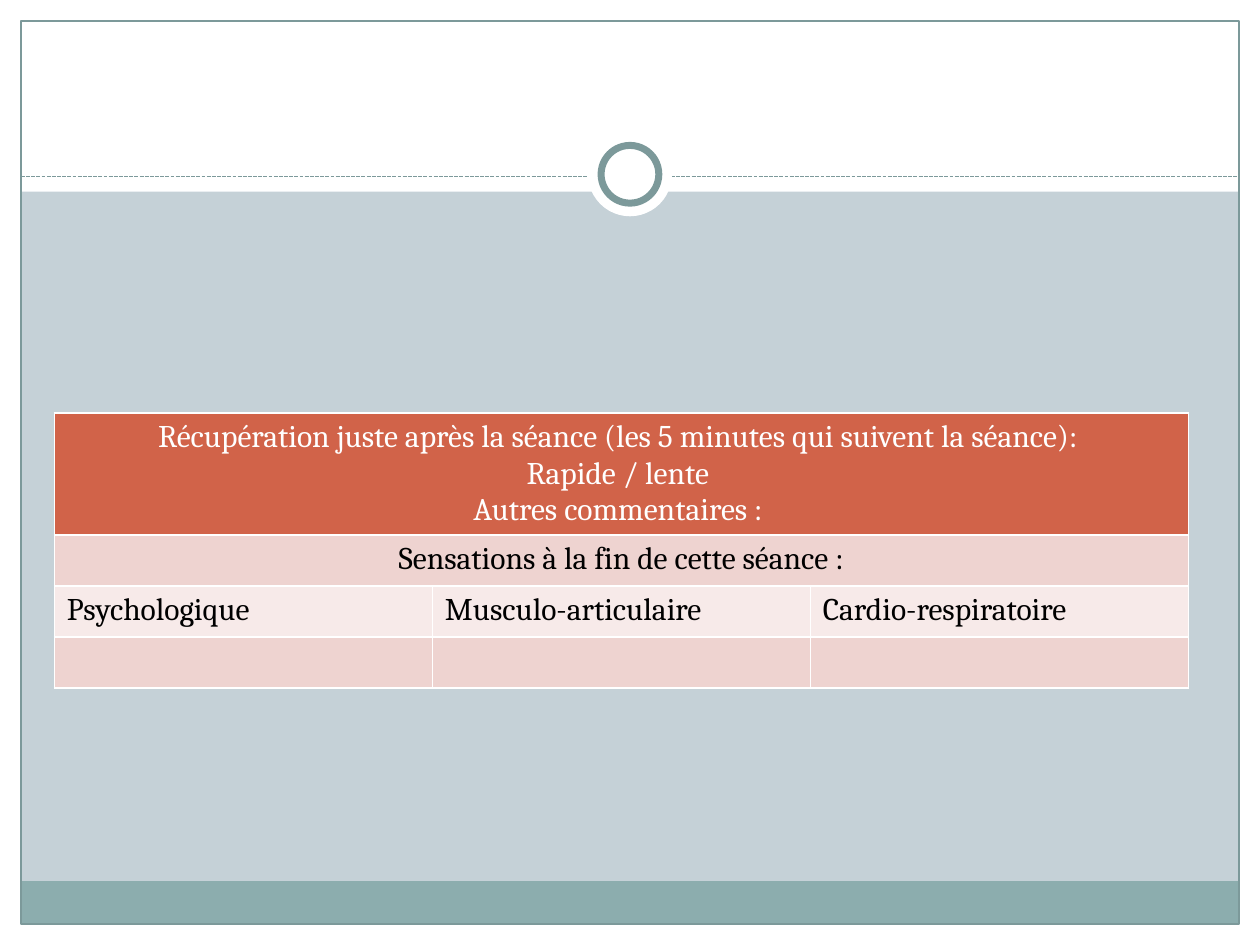
from lxml import etree
from pptx import Presentation
from pptx.dml.color import RGBColor
from pptx.enum import dml, shapes, text
from pptx.oxml import ns
from pptx.util import Pt

WHITE = RGBColor(0xFF, 0xFF, 0xFF)
BLACK = RGBColor(0, 0, 0)
MIST = RGBColor(0xC5, 0xD1, 0xD7)
TEAL = RGBColor(0x8C, 0xAD, 0xAE)
SLATE = RGBColor(0x7C, 0x99, 0x9A)
RUST = RGBColor(0xD1, 0x63, 0x49)
ROSE = RGBColor(0xEE, 0xD3, 0xD0)
BLUSH = RGBColor(0xF7, 0xEA, 0xE9)

WIDTH, HEIGHT, MARGIN = 720, 540, 12
FONT = {"name": "Cambria", "size": Pt(18), "bold": False}
HEADING = [
    "Récupération juste après la séance (les 5 minutes qui suivent la séance): ",
    "Rapide / lente ",
    "Autres commentaires : ",
]
QUESTION = ["Sensations à la fin de cette séance :"]
SENSATIONS = ["Psychologique", "Musculo-articulaire", "Cardio-respiratoire"]


def add_panel(page, box, fill=None, line=None, weight=0.75, kind=shapes.MSO_SHAPE.RECTANGLE):
    """Add a flat preset shape in the box, with optional fill and outline."""
    panel = page.shapes.add_shape(kind, *map(Pt, box))
    panel.shadow.inherit = False
    if fill is None:
        panel.fill.background()
    else:
        panel.fill.solid()
        panel.fill.fore_color.rgb = fill
    if line is None:
        panel.line.fill.background()
    else:
        panel.line.color.rgb = line
        panel.line.width = Pt(weight)


def add_frame(page, box):
    """Add the white margins, footer band and outline around the box."""
    left, top, width, height = box
    right, bottom = left + width, top + height
    add_panel(page, (0, bottom, WIDTH, HEIGHT - bottom), WHITE)
    add_panel(page, (0, 0, WIDTH, 109.5), WHITE)
    for edge in (0, right):
        add_panel(page, (edge, 0, left, HEIGHT), WHITE)
    add_panel(page, (left, bottom - 24.5, width, 24.5), TEAL)
    add_panel(page, box, line=SLATE)


def add_divider(page, box):
    """Add the dashed rule along the top of the box and the ring at its centre."""
    left, top, width, diameter = box
    rule = page.shapes.add_connector(
        shapes.MSO_CONNECTOR.STRAIGHT, Pt(left), Pt(top), Pt(left + width), Pt(top))
    rule.line.color.rgb = SLATE
    rule.line.width = Pt(0.75)
    rule.line.dash_style = dml.MSO_LINE.SQUARE_DOT
    rule_format = rule.line._get_or_add_ln()
    rule_format.find(ns.qn("a:prstDash")).set("val", "sysDash")
    etree.SubElement(rule_format.getparent(), ns.qn("a:effectLst"))
    centre_x, centre_y = left + width / 2, top - 1.2
    for size, line in ((diameter, None), (33, SLATE)):
        ring = (centre_x - size / 2, centre_y - size / 2, size, size)
        add_panel(page, ring, WHITE, line, 4, shapes.MSO_SHAPE.OVAL)


def add_borders(cell):
    """Give the cell white one-point borders on all sides."""
    properties = cell._tc.get_or_add_tcPr()
    for index, side in enumerate(("lnL", "lnR", "lnT", "lnB")):
        border = etree.Element(ns.qn(f"a:{side}"), w=str(Pt(1)))
        fill = etree.SubElement(border, ns.qn("a:solidFill"))
        etree.SubElement(fill, ns.qn("a:srgbClr"), val=str(WHITE))
        properties.insert(index, border)


def fill_cell(cell, lines, color, align):
    """Write one paragraph for each line in the cell."""
    frame = cell.text_frame
    for index, line in enumerate(lines):
        para = frame.add_paragraph() if index else frame.paragraphs[0]
        para.alignment = align
        span = para.add_run()
        span.text = line
        for name, value in FONT.items():
            setattr(span.font, name, value)
        span.font.color.rgb = color


def add_sensations_table(page, box):
    """Add the recovery and sensations table in the box."""
    columns, heights, fills = 3, (69.4, 29.2, 29.2, 29.2), (RUST, ROSE, BLUSH, ROSE)
    grid = page.shapes.add_table(len(heights), columns, *map(Pt, box)).table
    for row, height, fill in zip(grid.rows, heights, fills):
        row.height = Pt(height)
        for cell in row.cells:
            cell.fill.solid()
            cell.fill.fore_color.rgb = fill
            add_borders(cell)
    for index, (lines, color) in enumerate(((HEADING, WHITE), (QUESTION, BLACK))):
        grid.cell(index, 0).merge(grid.cell(index, columns - 1))
        fill_cell(grid.cell(index, 0), lines, color, text.PP_ALIGN.CENTER)
    for column, label in enumerate(SENSATIONS):
        fill_cell(grid.cell(2, column), [label], BLACK, text.PP_ALIGN.LEFT)


def main():
    """Build and save the one-slide deck."""
    deck = Presentation()
    deck.slide_width, deck.slide_height = Pt(WIDTH), Pt(HEIGHT)
    page = deck.slides.add_slide(deck.slide_layouts[6])
    page.background.fill.solid()
    page.background.fill.fore_color.rgb = MIST
    inner = WIDTH - 2 * MARGIN
    add_frame(page, (MARGIN, MARGIN, inner, HEIGHT - 2 * MARGIN))
    add_divider(page, (MARGIN, 100.8, inner, 48))
    add_sensations_table(page, (31, 236, 648, 157))
    deck.save("out.pptx")


if __name__ == "__main__":
    main()
